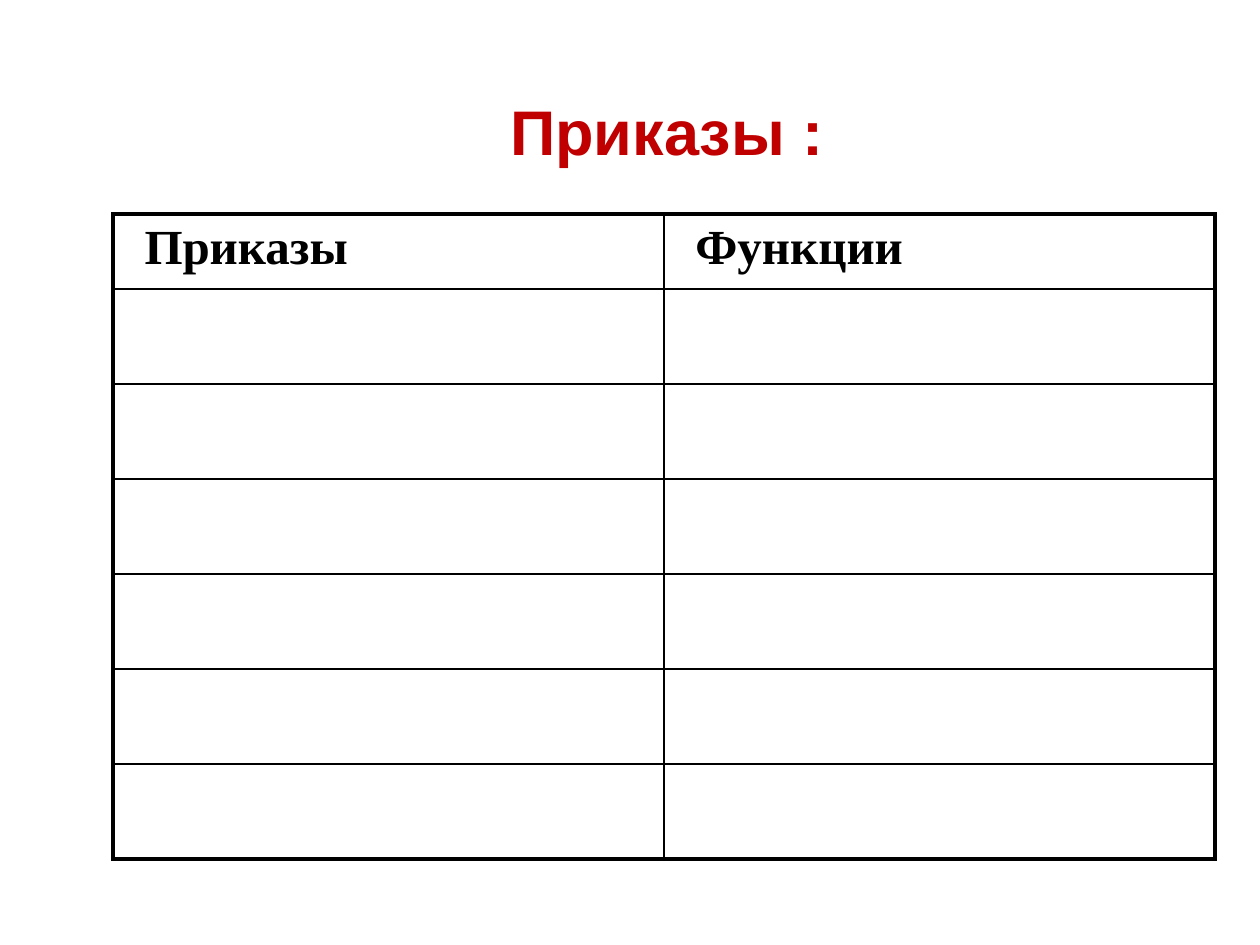
from lxml.etree import SubElement
from pptx import Presentation
from pptx.dml.color import RGBColor
from pptx.enum.shapes import MSO_SHAPE
from pptx.enum.text import MSO_ANCHOR, PP_ALIGN
from pptx.oxml.ns import qn
from pptx.util import Emu, Inches, Pt

EMU_PER_PX = 914400 / 126
RED = RGBColor(0xC0, 0x00, 0x00)
BLACK = RGBColor(0x00, 0x00, 0x00)
THIN, THICK = 1, 2.25

HEADERS = ["Приказы", "Функции"]
BLANK_ROWS = 6


def px(n):
    return Emu(round(n * EMU_PER_PX))


def write(tf, text, font="Arial", size=18, color=BLACK, bold=True, align=PP_ALIGN.LEFT):
    p = tf.paragraphs[0]
    p.alignment = align
    r = p.add_run()
    r.text = text
    r.font.name = font
    r.font.size = Pt(size)
    r.font.bold = bold
    r.font.color.rgb = color
    return p


def set_borders(cell, **widths):
    """Draw cell borders; widths are points keyed by side in L, R, T, B order."""
    tc_pr = cell._tc.get_or_add_tcPr()
    for side, width in widths.items():
        ln = SubElement(tc_pr, qn(f"a:ln{side}"), w=str(Pt(width)))
        fill = SubElement(ln, qn("a:solidFill"))
        SubElement(fill, qn("a:srgbClr"), val=str(BLACK))


class SlideBuilder:
    def __init__(self, prs):
        self.slide = prs.slides.add_slide(prs.slide_layouts[6])

    def bevel_heading(self, text, x, y, w, h):
        sp = self.slide.shapes.add_shape(MSO_SHAPE.BEVEL, px(x), px(y), px(w), px(h))
        sp.shadow.inherit = False
        sp.fill.background()
        sp.line.fill.background()
        tf = sp.text_frame
        tf.vertical_anchor = MSO_ANCHOR.MIDDLE
        tf.word_wrap = False
        write(tf, text, size=36, color=RED, align=PP_ALIGN.CENTER)

    def table(self, headers, blank_rows, x, y, col_w, header_h, row_h):
        n_rows, n_cols = blank_rows + 1, len(headers)
        frame = self.slide.shapes.add_table(
            n_rows, n_cols, px(x), px(y),
            px(col_w * n_cols), px(header_h + row_h * blank_rows))
        table = frame.table
        table.first_row = table.horz_banding = False
        for col in table.columns:
            col.width = px(col_w)
        for i, row in enumerate(table.rows):
            row.height = px(row_h if i else header_h)
            for j, cell in enumerate(row.cells):
                set_borders(
                    cell,
                    L=THICK if j == 0 else THIN,
                    R=THICK if j == n_cols - 1 else THIN,
                    T=THICK if i == 0 else THIN,
                    B=THICK if i == n_rows - 1 else THIN)
                cell.fill.background()
        for cell, text in zip(table.rows[0].cells, headers):
            p = write(cell.text_frame, text, font="Times New Roman", size=28)
            p_pr = p._p.get_or_add_pPr()
            p_pr.set("marL", str(Inches(0.15)))
            p_pr.set("indent", "0")


def main():
    prs = Presentation()
    prs.slide_width, prs.slide_height = px(1260), px(945)
    builder = SlideBuilder(prs)
    builder.bevel_heading("Приказы :", 74, 66, 1186, 128)
    builder.table(HEADERS, BLANK_ROWS, x=113, y=214, col_w=551, header_h=75, row_h=95)
    prs.save("out.pptx")


if __name__ == "__main__":
    main()
